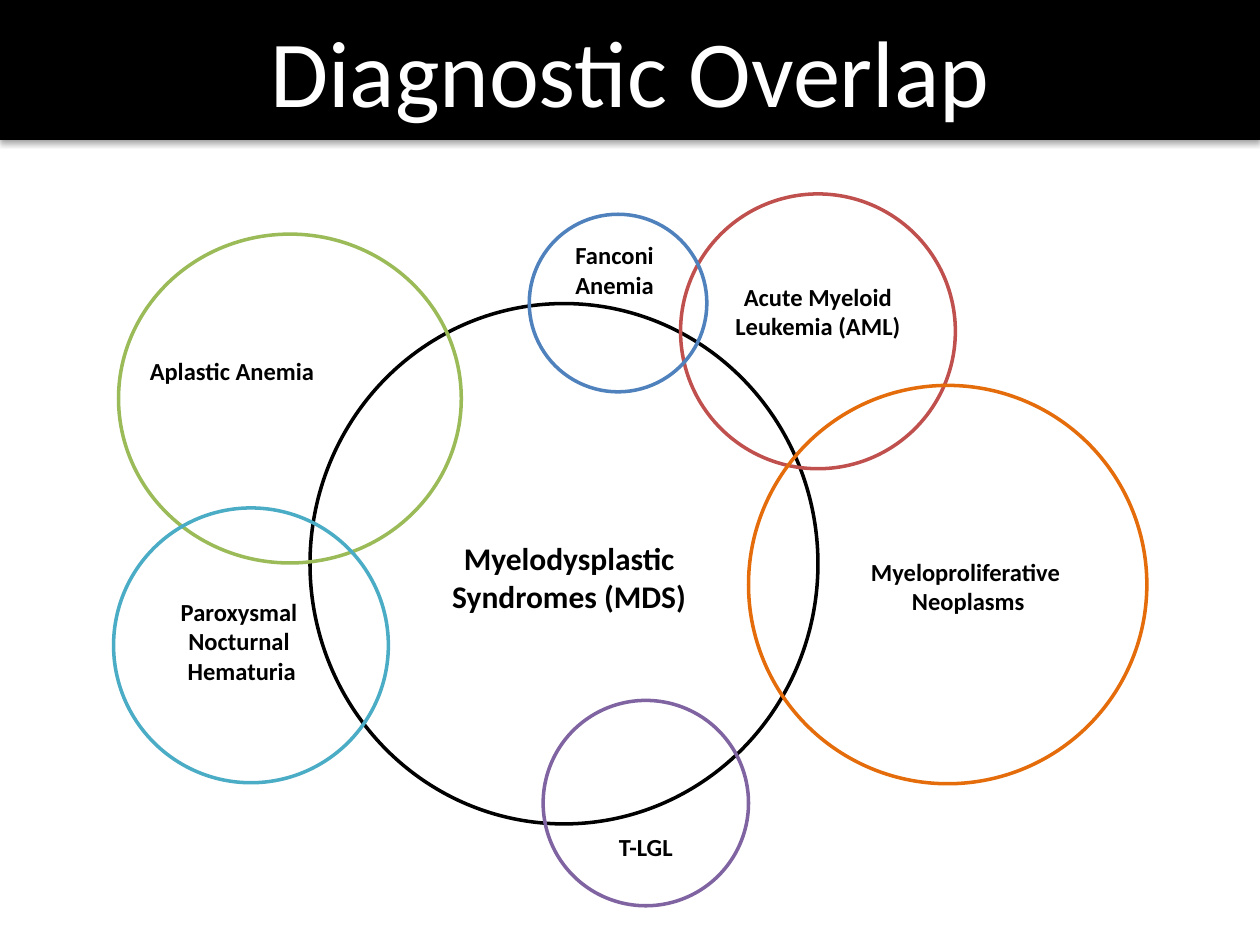
"""Builds the Diagnostic Overlap slide with its circles of related blood disorders."""
from dataclasses import dataclass

from lxml import etree
from pptx import Presentation
from pptx.dml.color import RGBColor
from pptx.enum import shapes, text
from pptx.util import Cm, Pt


@dataclass(frozen=True)
class Theme:
    font: str = "Calibri"
    black: str = "000000"
    white: str = "FFFFFF"
    green: str = "9BBB59"
    red: str = "C0504D"
    aqua: str = "4BACC6"
    blue: str = "4F81BD"
    purple: str = "8064A2"
    orange: str = "E46C0A"
    title: int = 54
    core: int = 18
    label: int = 14
    line: int = 2


@dataclass(frozen=True)
class Ring:
    box: tuple[float, float, float, float]
    hue: str
    words: str
    area: tuple[float, float, float, float]
    size: int = Theme.label
    left: bool = False


T = Theme()
RINGS = [
    Ring((6.25, 6.12, 10.24, 10.49), T.black, "Myelodysplastic\nSyndromes (MDS)",
         (8.53, 10.74, 5.89, 2.01), size=T.core),
    Ring((2.39, 4.72, 6.91, 6.63), T.green, "Aplastic Anemia",
         (2.77, 7.06, 6.12, 0.97), left=True),
    Ring((13.72, 3.91, 5.54, 5.54), T.red, "Acute Myeloid\nLeukemia (AML)",
         (14.33, 5.56, 4.32, 1.63)),
    Ring((2.29, 10.24, 5.54, 5.54), T.aqua, "Paroxysmal \nNocturnal \nHematuria",
         (3.2, 11.91, 3.35, 2.29)),
    Ring((10.67, 4.32, 3.58, 3.58), T.blue, "Fanconi\nAnemia",
         (11.35, 4.72, 2.36, 1.63), left=True),
    Ring((10.95, 14.12, 4.14, 4.14), T.purple, "T-LGL",
         (10.39, 16.64, 5.26, 0.97)),
    Ring((15.09, 7.77, 8.03, 8.03), T.orange, "Myeloproliferative \nNeoplasms",
         (17.02, 11.1, 5, 1.63)),
]
SHADE = (
    '<a:effectLst xmlns:a="http://schemas.openxmlformats.org/drawingml/2006/main">'
    '<a:outerShdw blurRad="39370" dist="22860" dir="5400000" rotWithShape="0">'
    '<a:srgbClr val="000000"><a:alpha val="35000"/></a:srgbClr>'
    '</a:outerShdw></a:effectLst>'
)


def write(frame, words: str, *, size: int, hue: str = T.black, bold: bool = False,
          left: bool = False, after: int = 0) -> None:
    """Fill a text frame with one formatted paragraph per line."""
    frame.text = words
    for para in frame.paragraphs:
        para.alignment = text.PP_ALIGN.LEFT if left else text.PP_ALIGN.CENTER
        para.space_after = Pt(after)
        font = para.runs[0].font
        font.name, font.size, font.bold = T.font, Pt(size), bold
        font.color.rgb = RGBColor.from_string(hue)


def head(slide, words: str) -> None:
    """Turn the title placeholder into a shaded band."""
    band = slide.shapes.title
    band.left, band.top, band.width, band.height = Cm(0), Cm(0), Cm(25.4), Cm(2.82)
    band.fill.solid()
    band.fill.fore_color.rgb = RGBColor.from_string(T.black)
    band.line.fill.background()
    band._element.spPr.append(etree.fromstring(SHADE))
    frame = band.text_frame
    frame.auto_size = text.MSO_AUTO_SIZE.NONE
    frame.vertical_anchor = text.MSO_ANCHOR.MIDDLE
    write(frame, words, size=T.title, hue=T.white, after=6)


def draw(slide, ring: Ring) -> None:
    """Draw the outline of a ring."""
    oval = slide.shapes.add_shape(shapes.MSO_SHAPE.OVAL, *map(Cm, ring.box))
    oval.shadow.inherit = False
    oval.fill.background()
    oval.line.color.rgb = RGBColor.from_string(ring.hue)
    oval.line.width = Pt(T.line)


def label(slide, ring: Ring) -> None:
    """Place the name of a ring."""
    frame = slide.shapes.add_textbox(*map(Cm, ring.area)).text_frame
    frame.word_wrap = "\n" not in ring.words
    write(frame, ring.words, size=ring.size, bold=True, left=ring.left)


def main() -> None:
    """Build and save the slide."""
    deck = Presentation()
    deck.slide_width, deck.slide_height = Cm(25.4), Cm(19.05)
    slide = deck.slides.add_slide(deck.slide_layouts[5])
    head(slide, "Diagnostic Overlap")
    for ring in RINGS:
        draw(slide, ring)
        label(slide, ring)
    deck.save("out.pptx")


if __name__ == "__main__":
    main()
